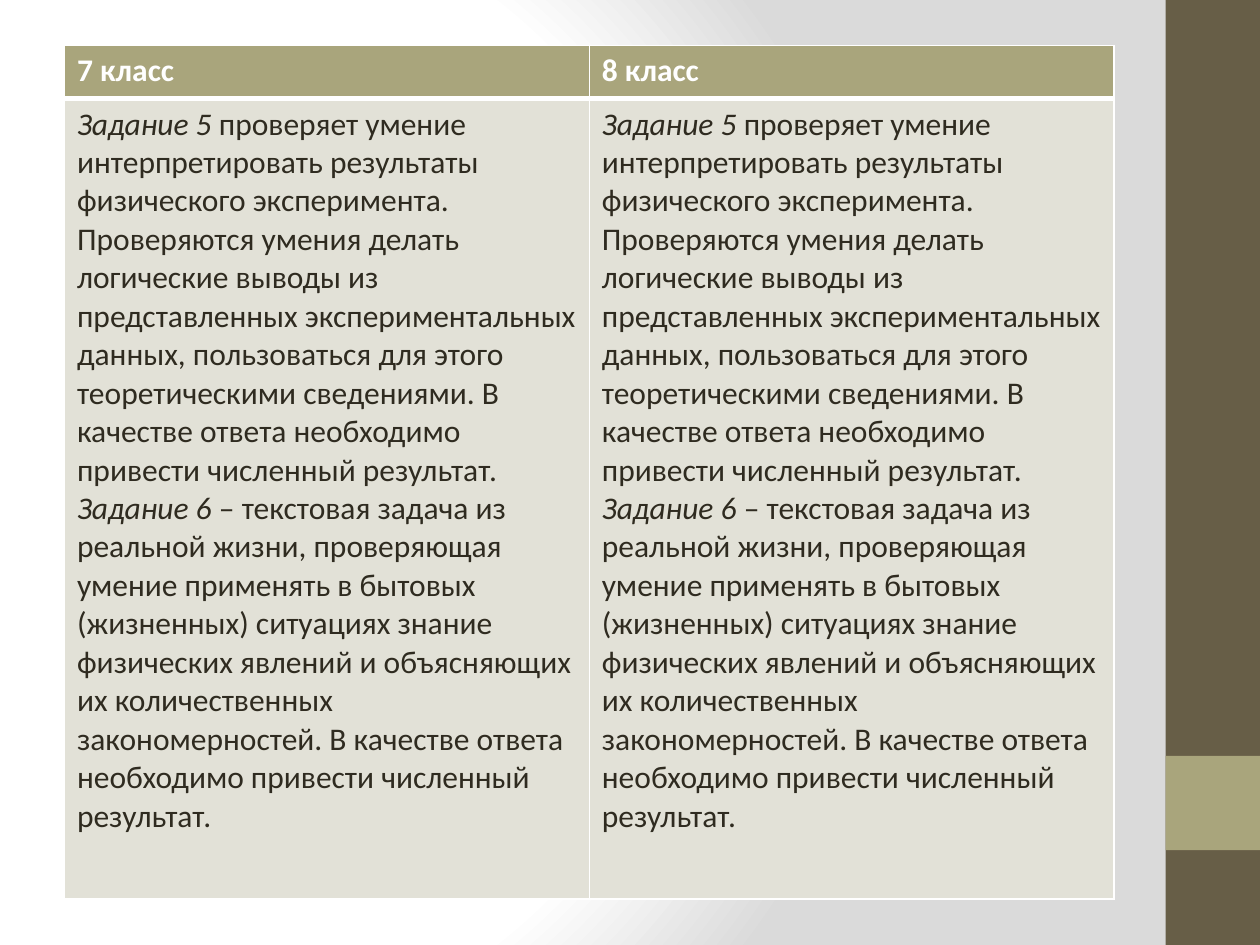
from typing import NamedTuple

from lxml import etree
from pptx import Presentation
from pptx import util as u
from pptx.dml.color import RGBColor
from pptx.enum import shapes
from pptx.oxml import parse_xml
from pptx.oxml.ns import nsdecls, qn

WHITE, OLIVE, BROWN = "FFFFFF", "A9A57C", "675E47"
INK, PALE, GREY = "2F2B20", "E2E1D7", "DADADA"


class Bar(NamedTuple):
    top: float
    height: float
    color: str


class Run(NamedTuple):
    text: str
    italic: bool = False


class RowStyle(NamedTuple):
    height: float
    fill: str
    ink: str
    bold: bool
    borders: dict[str, float]


BARS = [Bar(0, 19.05, BROWN), Bar(15.24, 1.9, OLIVE)]
ROW_STYLES = [
    RowStyle(1.07, OLIVE, WHITE, True, {"L": 1, "R": 1, "T": 1, "B": 3}),
    RowStyle(16.13, PALE, INK, False, {"L": 1, "R": 1, "T": 3, "B": 1}),
]
GRADES = ["7 класс", "8 класс"]
TASKS = [
    [Run("Задание 5", True),
     Run(" проверяет умение интерпретировать результаты физического "
         "эксперимента. Проверяются умения делать логические выводы из "
         "представленных экспериментальных данных, пользоваться для этого "
         "теоретическими сведениями. В качестве ответа необходимо привести "
         "численный результат.")],
    [Run("Задание 6", True),
     Run(" – текстовая задача из реальной жизни, проверяющая умение применять "
         "в бытовых (жизненных) ситуациях знание физических явлений и "
         "объясняющих их количественных закономерностей. В качестве ответа "
         "необходимо привести численный результат.")],
]


def rgb(color: str) -> RGBColor:
    return RGBColor.from_string(color)


def set_background(s) -> None:
    """Fill the slide with a circular gradient centred left of the middle."""
    s.background.fill.solid()
    bg = s.element.find(".//" + qn("p:bgPr"))
    stops = "".join(
        f'<a:gs pos="{pos * 1000}"><a:srgbClr val="{color}"/></a:gs>'
        for pos, color in [(0, WHITE), (75, WHITE), (100, GREY)])
    bg.replace(bg[0], parse_xml(
        f'<a:gradFill {nsdecls("a")} rotWithShape="1"><a:gsLst>{stops}</a:gsLst>'
        '<a:path path="circle"><a:fillToRect l="20000" t="50000" r="100000" '
        'b="50000"/></a:path></a:gradFill>'))


def add_bar(s, bar: Bar) -> None:
    sp = s.shapes.add_shape(shapes.MSO_SHAPE.RECTANGLE, u.Cm(23.5), u.Cm(bar.top),
                            u.Cm(1.9), u.Cm(bar.height))
    sp.shadow.inherit = False
    sp.fill.solid()
    sp.fill.fore_color.rgb = rgb(bar.color)
    sp.line.fill.background()


def set_borders(cell, borders: dict[str, float]) -> None:
    tc_pr = cell._tc.get_or_add_tcPr()
    for i, (side, width) in enumerate(borders.items()):
        ln = etree.Element(qn(f"a:ln{side}"), w=str(u.Pt(width)))
        fill = etree.SubElement(ln, qn("a:solidFill"))
        etree.SubElement(fill, qn("a:srgbClr"), val=WHITE)
        tc_pr.insert(i, ln)


def fill_cell(cell, paragraphs: list[list[Run]], style: RowStyle) -> None:
    cell.fill.solid()
    cell.fill.fore_color.rgb = rgb(style.fill)
    set_borders(cell, style.borders)
    tf = cell.text_frame
    for i, runs in enumerate(paragraphs):
        p = tf.add_paragraph() if i else tf.paragraphs[0]
        for run in runs:
            r = p.add_run()
            r.text = run.text
            font = {"name": "Calibri", "size": u.Pt(18),
                    "bold": style.bold, "italic": run.italic}
            for name, value in font.items():
                setattr(r.font, name, value)
            r.font.color.rgb = rgb(style.ink)


def add_grade_table(s) -> None:
    rows = [[[[Run(grade)]] for grade in GRADES], [TASKS for _ in GRADES]]
    height = sum(style.height for style in ROW_STYLES)
    table = s.shapes.add_table(len(rows), len(GRADES), u.Cm(1.3), u.Cm(0.92),
                               u.Cm(21.16), u.Cm(height)).table
    for y, (cells, style) in enumerate(zip(rows, ROW_STYLES)):
        table.rows[y].height = u.Cm(style.height)
        for x, paragraphs in enumerate(cells):
            fill_cell(table.cell(y, x), paragraphs, style)


def main() -> None:
    prs = Presentation()
    prs.slide_width, prs.slide_height = u.Cm(25.4), u.Cm(19.05)
    s = prs.slides.add_slide(prs.slide_layouts[6])
    set_background(s)
    for bar in BARS:
        add_bar(s, bar)
    add_grade_table(s)
    prs.save("out.pptx")


if __name__ == "__main__":
    main()
